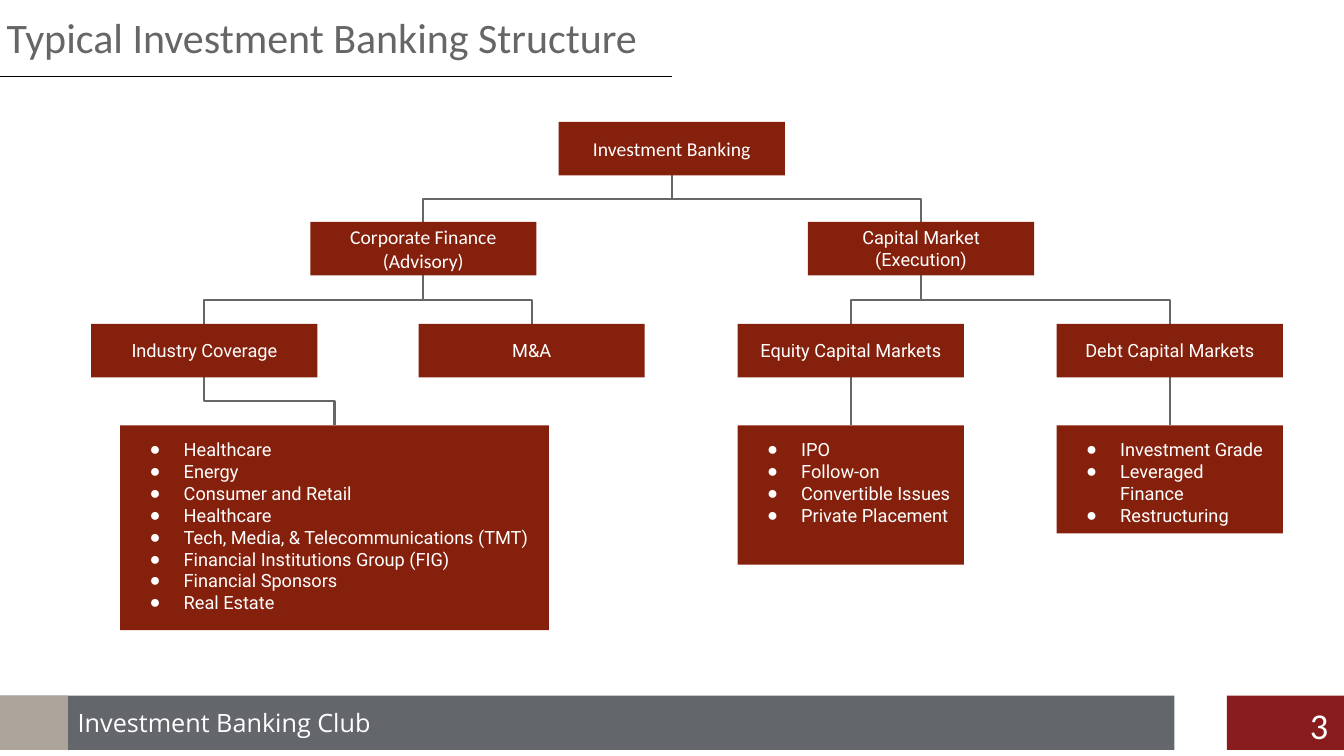
"""Build the slide on the typical structure of an investment bank."""
from dataclasses import dataclass

from lxml.etree import SubElement
from pptx import Presentation
from pptx.dml.color import RGBColor
from pptx.enum.shapes import MSO_CONNECTOR, MSO_SHAPE
from pptx.enum.text import MSO_ANCHOR, MSO_AUTO_SIZE, PP_ALIGN
from pptx.oxml.ns import qn
from pptx.util import Cm, Pt

MAROON, GREY, WHITE = "85200C", "666666", "FFFFFF"
UNIT_WIDTH, UNIT_HEIGHT = 5.7, 1.35
LIST_TOP = 10.72
TIER_TOPS = (3.07, 5.59, 8.16)


@dataclass(frozen=True)
class TextStyle:
    font: str
    size: float
    color: str = WHITE
    align: PP_ALIGN = PP_ALIGN.LEFT
    anchor: MSO_ANCHOR = MSO_ANCHOR.TOP
    inset_x: float = 0.25
    inset_y: float = 0.13


@dataclass(frozen=True)
class Unit:
    label: str
    center: float
    tier: int
    parent: str
    font: str = "Roboto"
    size: float = 13

    @property
    def top(self):
        return TIER_TOPS[self.tier]

    @property
    def bottom(self):
        return self.top + UNIT_HEIGHT


@dataclass(frozen=True)
class Coverage:
    parent: str
    placeholder: int
    center: float
    width: float
    height: float
    items: tuple


@dataclass(frozen=True)
class Bar:
    left: float
    width: float
    color: str


UNITS = {unit.label: unit for unit in (
    Unit("Investment Banking", 16.93, 0, "", "Calibri", 14),
    Unit("Corporate Finance\n(Advisory)", 10.67, 1, "Investment Banking", "Calibri", 14),
    Unit("Capital Market\n(Execution)", 23.21, 1, "Investment Banking"),
    Unit("Industry Coverage", 5.15, 2, "Corporate Finance\n(Advisory)"),
    Unit("M&A", 13.4, 2, "Corporate Finance\n(Advisory)"),
    Unit("Equity Capital Markets", 21.44, 2, "Capital Market\n(Execution)"),
    Unit("Debt Capital Markets", 29.48, 2, "Capital Market\n(Execution)"),
)}

COVERAGES = (
    Coverage("Industry Coverage", 1, 8.43, 10.8, 5.16, (
        "Healthcare", "Energy", "Consumer and Retail", "Healthcare",
        "Tech, Media, & Telecommunications (TMT)",
        "Financial Institutions Group (FIG)", "Financial Sponsors", "Real Estate")),
    Coverage("Equity Capital Markets", 2, 21.44, UNIT_WIDTH, 3.51, (
        "IPO", "Follow-on", "Convertible Issues", "Private Placement")),
    Coverage("Debt Capital Markets", 4, 29.48, UNIT_WIDTH, 2.72, (
        "Investment Grade", "Leveraged Finance", "Restructuring")),
)

FOOTER_BARS = (Bar(0, 29.6, "63666A"), Bar(30.92, 2.95, "881C1C"), Bar(0, 1.71, "ACA39A"))


def rgb(color: str) -> RGBColor:
    return RGBColor.from_string(color)


def paint(shape, color: str) -> None:
    shape.fill.solid()
    shape.fill.fore_color.rgb = rgb(color)


def place(shape, left: float, top: float, width: float, height: float) -> None:
    shape.left, shape.top = Cm(left), Cm(top)
    shape.width, shape.height = Cm(width), Cm(height)


def add_bullet(paragraph) -> None:
    properties = paragraph._p.get_or_add_pPr()
    properties.set("marL", str(Cm(1.27)))
    properties.set("indent", str(-Cm(0.86)))
    bullet_color = SubElement(properties, qn("a:buClr"))
    SubElement(bullet_color, qn("a:srgbClr")).set("val", WHITE)
    SubElement(properties, qn("a:buChar")).set("char", "●")


def write(shape, text: str, style: TextStyle, bulleted: bool = False) -> None:
    frame = shape.text_frame
    frame.text = text
    frame.word_wrap = True
    frame.auto_size = MSO_AUTO_SIZE.NONE
    frame.vertical_anchor = style.anchor
    frame.margin_left = frame.margin_right = Cm(style.inset_x)
    frame.margin_top = frame.margin_bottom = Cm(style.inset_y)
    for paragraph in frame.paragraphs:
        paragraph.alignment = style.align
        paragraph.space_before = Pt(0)
        if bulleted:
            add_bullet(paragraph)
        for run in paragraph.runs:
            run.font.name = style.font
            run.font.size = Pt(style.size)
            run.font.bold = False
            run.font.color.rgb = rgb(style.color)


def add_block(slide, left: float, top: float, width: float, height: float, color: str):
    block = slide.shapes.add_shape(
        MSO_SHAPE.RECTANGLE, Cm(left), Cm(top), Cm(width), Cm(height))
    block.shadow.inherit = False
    block.line.fill.background()
    paint(block, color)
    return block


def add_label(slide, left: float, top: float, width: float, height: float,
              text: str, style: TextStyle) -> None:
    label = slide.shapes.add_textbox(Cm(left), Cm(top), Cm(width), Cm(height))
    write(label, text, style)


def add_line(slide, kind: MSO_CONNECTOR, x1: float, y1: float, x2: float, y2: float,
             color: str, weight: float):
    line = slide.shapes.add_connector(kind, Cm(x1), Cm(y1), Cm(x2), Cm(y2))
    line.line.color.rgb = rgb(color)
    line.line.width = Pt(weight)
    SubElement(line._element.spPr, qn("a:effectLst"))
    return line


def add_branch(slide, x1: float, y1: float, x2: float, y2: float) -> None:
    """Join a parent to a child below it, turning the elbow so that it leaves downwards."""
    if x1 == x2:
        add_line(slide, MSO_CONNECTOR.STRAIGHT, x1, y1, x2, y2, GREY, 1.5)
        return
    middle_x, middle_y = (x1 + x2) / 2, (y1 + y2) / 2
    half_drop, half_span = (y2 - y1) / 2, abs(x2 - x1) / 2
    rightward = x2 > x1
    reach = -half_drop if rightward else half_drop
    elbow = add_line(slide, MSO_CONNECTOR.ELBOW, middle_x - reach, middle_y - half_span,
                     middle_x + reach, middle_y + half_span, GREY, 1.5)
    elbow._element.spPr.find(qn("a:xfrm")).set("rot", str((270 if rightward else 90) * 60000))


def add_unit(slide, unit: Unit) -> None:
    block = add_block(slide, unit.center - UNIT_WIDTH / 2, unit.top,
                      UNIT_WIDTH, UNIT_HEIGHT, MAROON)
    write(block, unit.label, TextStyle(unit.font, unit.size, align=PP_ALIGN.CENTER,
                                       anchor=MSO_ANCHOR.MIDDLE, inset_x=0.33, inset_y=0.33))


def fill_coverage(slide, coverage: Coverage) -> None:
    body = slide.placeholders[coverage.placeholder]
    place(body, coverage.center - coverage.width / 2, LIST_TOP, coverage.width, coverage.height)
    paint(body, MAROON)
    write(body, "\n".join(coverage.items),
          TextStyle("Roboto", 13, inset_x=0.33, inset_y=0.33), bulleted=True)


def main() -> None:
    deck = Presentation()
    deck.slide_width, deck.slide_height = Cm(33.87), Cm(19.05)
    slide = deck.slides.add_slide(deck.slide_layouts.get_by_name("Comparison"))

    title = slide.shapes.title
    place(title, -0.08, 0, 17.02, 1.8)
    write(title, "Typical Investment Banking Structure",
          TextStyle("Calibri", 30, GREY, inset_y=0.28))
    add_line(slide, MSO_CONNECTOR.STRAIGHT, 0, 1.93, 16.93, 1.93, "000000", 0.75)

    for bar in FOOTER_BARS:
        add_block(slide, bar.left, 17.53, bar.width, 1.37, bar.color)
    add_label(slide, 1.71, 17.7, 27.89, 1.02, "Investment Banking Club",
              TextStyle("Open Sans", 18))
    add_label(slide, 31.7, 17.6, 2.03, 1.45, "3",
              TextStyle("Calibri", 26, align=PP_ALIGN.RIGHT))

    for unit in UNITS.values():
        if unit.parent:
            parent = UNITS[unit.parent]
            add_branch(slide, parent.center, parent.bottom, unit.center, unit.top)
    for coverage in COVERAGES:
        parent = UNITS[coverage.parent]
        add_branch(slide, parent.center, parent.bottom, coverage.center, LIST_TOP)
        fill_coverage(slide, coverage)
    for unit in UNITS.values():
        add_unit(slide, unit)

    spare = slide.placeholders[3]._element
    spare.getparent().remove(spare)
    deck.save("out.pptx")


if __name__ == "__main__":
    main()
